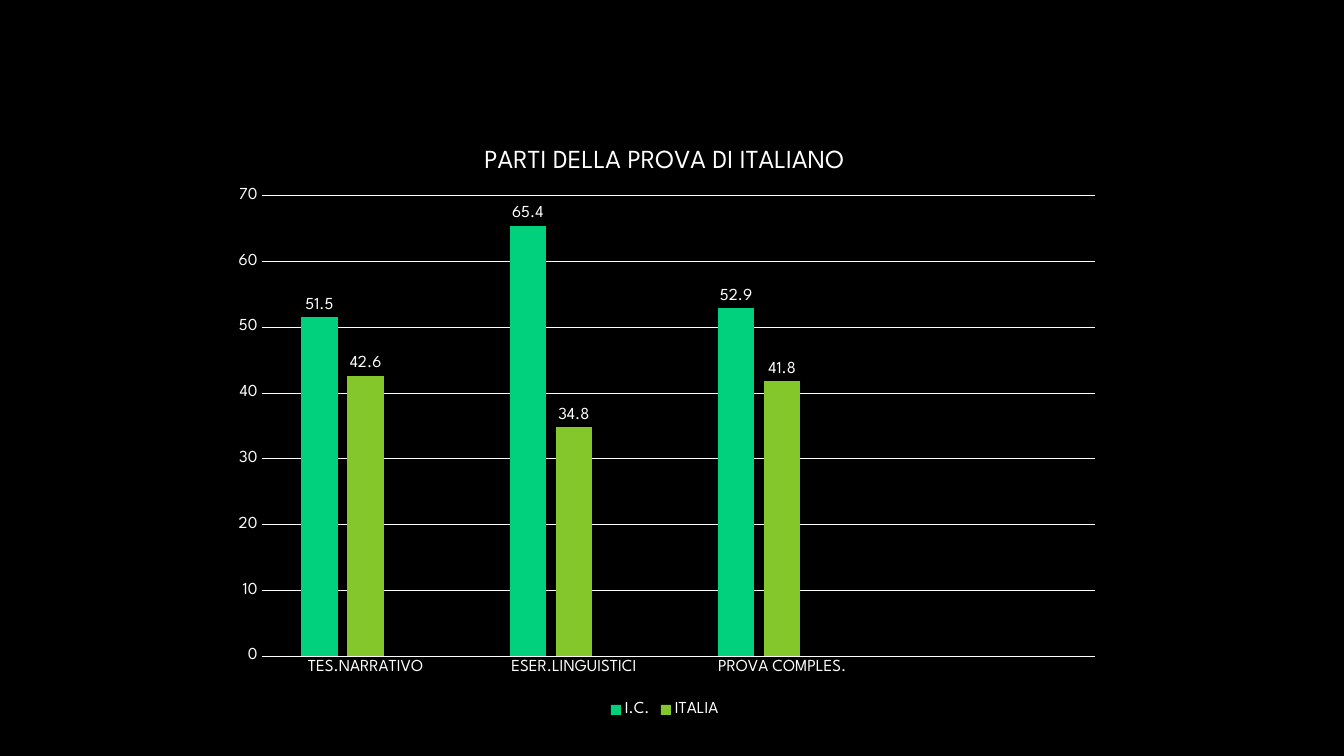
from lxml import etree
from pptx import Presentation
from pptx import oxml
from pptx import util as u
from pptx.chart import data as chart_data
from pptx.dml import color
from pptx.enum import chart as chart_enum
from pptx.oxml import ns

BLACK = color.RGBColor(0x00, 0x00, 0x00)
WHITE = color.RGBColor(0xFF, 0xFF, 0xFF)
GREEN = color.RGBColor(0x01, 0xD1, 0x7D)
LIME = color.RGBColor(0x84, 0xC7, 0x2A)
YELLOW = color.RGBColor(0xE1, 0xD1, 0x26)

FONT = "League Spartan"
TITLE = "PARTI DELLA PROVA DI ITALIANO"
CATEGORIES = ["TES.NARRATIVO", "ESER.LINGUISTICI", "PROVA COMPLES.", ""]
SERIES = [
    ("I.C.", [51.5, 65.4, 52.9, None], GREEN),
    ("ITALIA", [42.6, 34.8, 41.8, None], LIME),
    ("Series 3", [None] * 4, YELLOW),
]
PLOT_BOX = {"x": 0.05, "y": 0.12, "w": 0.93, "h": 0.77}


def format_font(font, size):
    """Give a font the deck's typeface and colour at a size in points."""
    for name, value in {"name": FONT, "size": u.Pt(size), "bold": False}.items():
        setattr(font, name, value)
    font.color.rgb = WHITE


def format_line(line):
    """Draw a thin white line."""
    line.color.rgb = WHITE
    line.width = u.Pt(0.75)


def format_axes(chart):
    """Style both axes and the horizontal gridlines."""
    for axis in (chart.category_axis, chart.value_axis):
        axis.major_tick_mark = chart_enum.XL_TICK_MARK.NONE
        axis.minor_tick_mark = chart_enum.XL_TICK_MARK.NONE
        format_font(axis.tick_labels.font, 12)
    format_line(chart.category_axis.format.line)
    value_axis = chart.value_axis
    scale = {"minimum_scale": 0, "maximum_scale": 70, "major_unit": 10}
    for name, value in scale.items():
        setattr(value_axis, name, value)
    value_axis.format.line.fill.background()
    format_line(value_axis.major_gridlines.format.line)


def format_bars(plot):
    """Colour the bars and label their values."""
    for name, value in {"gap_width": 219, "overlap": -27, "vary_by_categories": False}.items():
        setattr(plot, name, value)
    for series, (_, values, fill_color) in zip(plot.series, SERIES):
        series.format.fill.solid()
        series.format.fill.fore_color.rgb = fill_color
        if any(values):
            labels = series.data_labels
            labels.show_value = True
            labels.position = chart_enum.XL_LABEL_POSITION.OUTSIDE_END
            format_font(labels.font, 12)


def format_legend(chart):
    """Place the legend below the plot without the empty series."""
    chart.has_legend = True
    legend = chart.legend
    legend.position = chart_enum.XL_LEGEND_POSITION.BOTTOM
    legend.include_in_layout = False
    format_font(legend.font, 12)
    entry = oxml.parse_xml(
        f'<c:legendEntry {ns.nsdecls("c")}><c:idx val="2"/><c:delete val="1"/></c:legendEntry>'
    )
    legend._element.insert(1, entry)


def place_plot(chart):
    """Fix the inner plot area as fractions of the chart."""
    layout = etree.Element(ns.qn("c:layout"))
    manual = etree.SubElement(layout, ns.qn("c:manualLayout"))
    settings = {"layoutTarget": "inner", "xMode": "edge", "yMode": "edge", **PLOT_BOX}
    for name, value in settings.items():
        etree.SubElement(manual, ns.qn(f"c:{name}"), val=str(value))
    plot_area = chart._chartSpace.find(f".//{ns.qn('c:plotArea')}")
    for old_layout in plot_area.findall(ns.qn("c:layout")):
        plot_area.remove(old_layout)
    plot_area.insert(0, layout)


def add_results_chart(slide, left, top, width, height):
    """Add the column chart of test results in the given box."""
    results = chart_data.CategoryChartData()
    results.categories = CATEGORIES
    for name, values, _ in SERIES:
        results.add_series(name, values)
    chart = slide.shapes.add_chart(
        chart_enum.XL_CHART_TYPE.COLUMN_CLUSTERED,
        *(u.Pt(length) for length in (left, top, width, height)),
        results,
    ).chart
    format_font(chart.font, 10)
    chart.has_title = True
    title_frame = chart.chart_title.text_frame
    title_frame.text = TITLE
    format_font(title_frame.paragraphs[0].runs[0].font, 18.6)
    chart.chart_title.include_in_layout = False
    format_axes(chart)
    format_bars(chart.plots[0])
    format_legend(chart)
    place_plot(chart)


def main():
    """Build and save the presentation."""
    presentation = Presentation()
    presentation.slide_width = u.Pt(960)
    presentation.slide_height = u.Pt(540)
    slide = presentation.slides.add_slide(presentation.slide_layouts[6])
    slide.background.fill.solid()
    slide.background.fill.fore_color.rgb = BLACK
    add_results_chart(slide, 154.8, 88.6, 640, 427)
    presentation.save("out.pptx")


if __name__ == "__main__":
    main()
